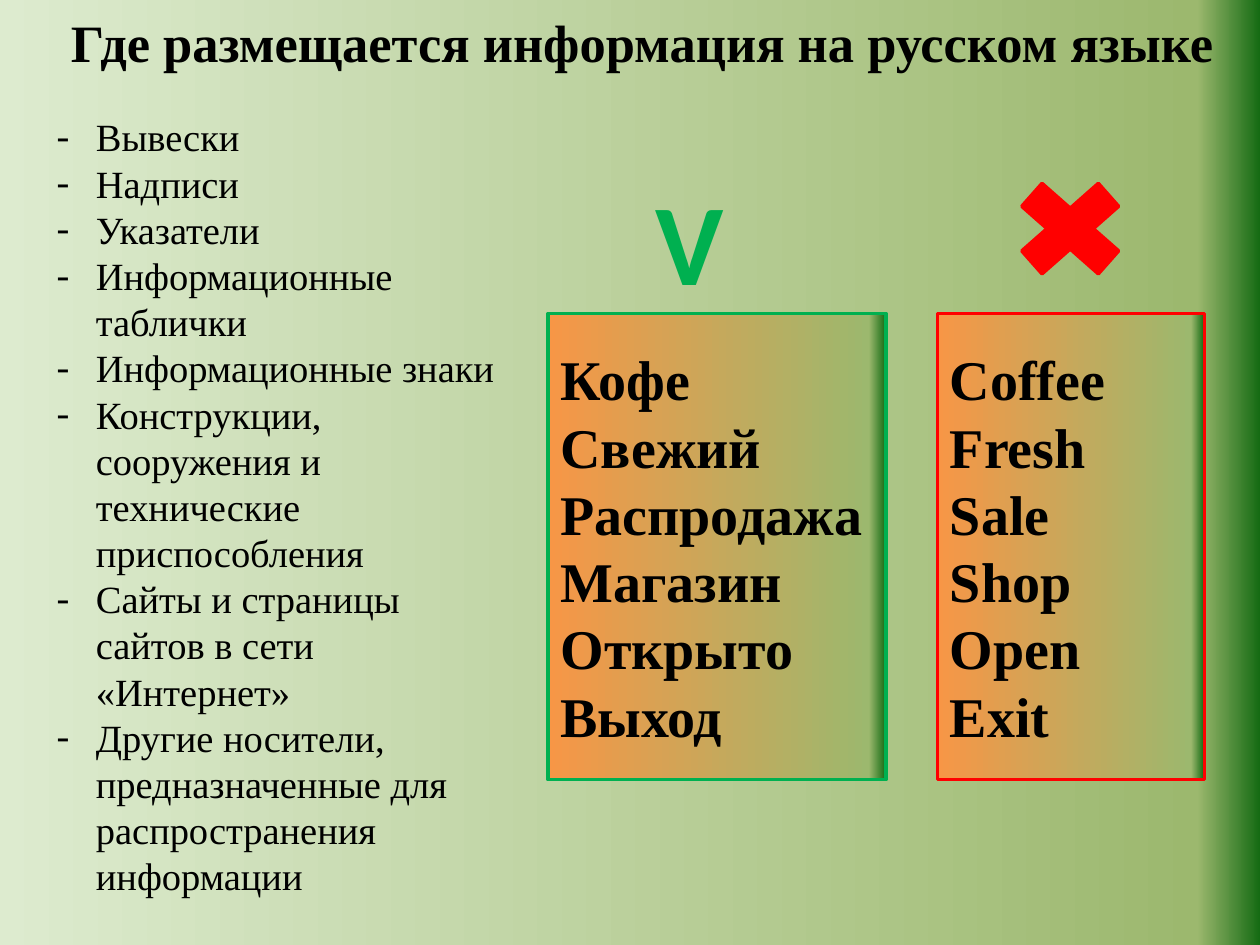
from copy import deepcopy

from lxml import etree
from pptx import Presentation
from pptx import util as u
from pptx.dml.color import RGBColor
from pptx.enum import shapes, text
from pptx.oxml.ns import qn

SERIF = "Times New Roman"
BLACK, GREEN, RED = "000000", "00B050", "FF0000"
PLACES = ["Вывески", "Надписи", "Указатели", "Информационные таблички",
          "Информационные знаки",
          "Конструкции, сооружения и технические приспособления",
          "Сайты и страницы сайтов в сети «Интернет»",
          "Другие носители, предназначенные для распространения информации"]
RUSSIAN = ["Кофе", "Свежий", "Распродажа", "Магазин", "Открыто", "Выход"]
ENGLISH = ["Coffee", "Fresh", "Sale", "Shop", "Open", "Exit"]


def color(value):
    return RGBColor.from_string(value)


def write(frame, lines, size, font=SERIF, ink=BLACK, bold=False,
          align=text.PP_ALIGN.LEFT, anchor=text.MSO_ANCHOR.TOP, bullet=None):
    frame.word_wrap = True
    frame.auto_size = text.MSO_AUTO_SIZE.NONE
    frame.vertical_anchor = anchor
    for number, line in enumerate(lines):
        paragraph = frame.paragraphs[0] if number == 0 else frame.add_paragraph()
        paragraph.alignment = align
        paragraph.space_before = u.Pt(0)
        if bullet:
            props = paragraph._p.get_or_add_pPr()
            props.set("marL", str(u.Cm(0.79)))
            props.set("indent", str(-u.Cm(0.79)))
            etree.SubElement(props, qn("a:buFont"), typeface=font)
            etree.SubElement(props, qn("a:buChar"), char=bullet)
        run = paragraph.add_run()
        run.text = line
        run.font.name = font
        run.font.size = u.Pt(size)
        run.font.bold = bold
        run.font.color.rgb = color(ink)


class SlideBuilder:
    tail = [(0.95, "9CB86E"), (1, "156B13")]

    def __init__(self, slide):
        self.slide = slide

    def gradient(self, fill, element, start):
        fill.gradient()
        fill.gradient_angle = 0
        stops = element.xpath(".//a:gradFill/a:gsLst")[0]
        stops.append(deepcopy(stops[-1]))
        for stop, (position, value) in zip(fill.gradient_stops,
                                           [(0, start)] + self.tail):
            stop.position = position
            stop.color.rgb = color(value)

    def background(self, start):
        self.gradient(self.slide.background.fill, self.slide.element, start)

    def placeholder(self, index, box, lines, size, **style):
        holder = self.slide.placeholders[index]
        holder.left, holder.top, holder.width, holder.height = map(u.Cm, box)
        write(holder.text_frame, lines, size, **style)

    def label(self, box, line, size, **style):
        frame = self.slide.shapes.add_textbox(*map(u.Cm, box)).text_frame
        write(frame, [line], size, **style)

    def shape(self, kind, box, outline):
        shape = self.slide.shapes.add_shape(kind, *map(u.Cm, box))
        shape.shadow.inherit = False
        shape.line.color.rgb = color(outline)
        shape.line.width = u.Pt(2)
        return shape

    def word_card(self, left, width, words, outline):
        card = self.shape(shapes.MSO_SHAPE.RECTANGLE,
                          (left, 6.32, width, 9.4), outline)
        self.gradient(card.fill, card.element, "F79646")
        write(card.text_frame, words, 32, bold=True,
              anchor=text.MSO_ANCHOR.MIDDLE)

    def cross(self, box, ink):
        cross = self.shape(shapes.MSO_SHAPE.MATH_MULTIPLY, box, ink)
        cross.fill.solid()
        cross.fill.fore_color.rgb = color(ink)


def main():
    deck = Presentation()
    deck.slide_width, deck.slide_height = u.Cm(25.4), u.Cm(19.05)
    page = SlideBuilder(deck.slides.add_slide(deck.slide_layouts[1]))
    page.background("DDEBCF")
    page.placeholder(0, (0.51, 0.08, 24.89, 1.55),
                     ["Где размещается информация на русском языке"], 30,
                     bold=True, align=text.PP_ALIGN.CENTER)
    page.placeholder(1, (0.89, 2.16, 9.68, 16.26), PLACES, 22, bullet="-")
    page.word_card(11.05, 6.81, RUSSIAN, GREEN)
    page.word_card(18.9, 5.38, ENGLISH, RED)
    page.cross((20.09, 3.3, 2.97, 2.62), RED)
    page.label((12.5, 3.3, 2.79, 3.07), "V", 66, font="Calibri", ink=GREEN,
               bold=True, align=text.PP_ALIGN.CENTER)
    deck.save("out.pptx")


if __name__ == "__main__":
    main()
